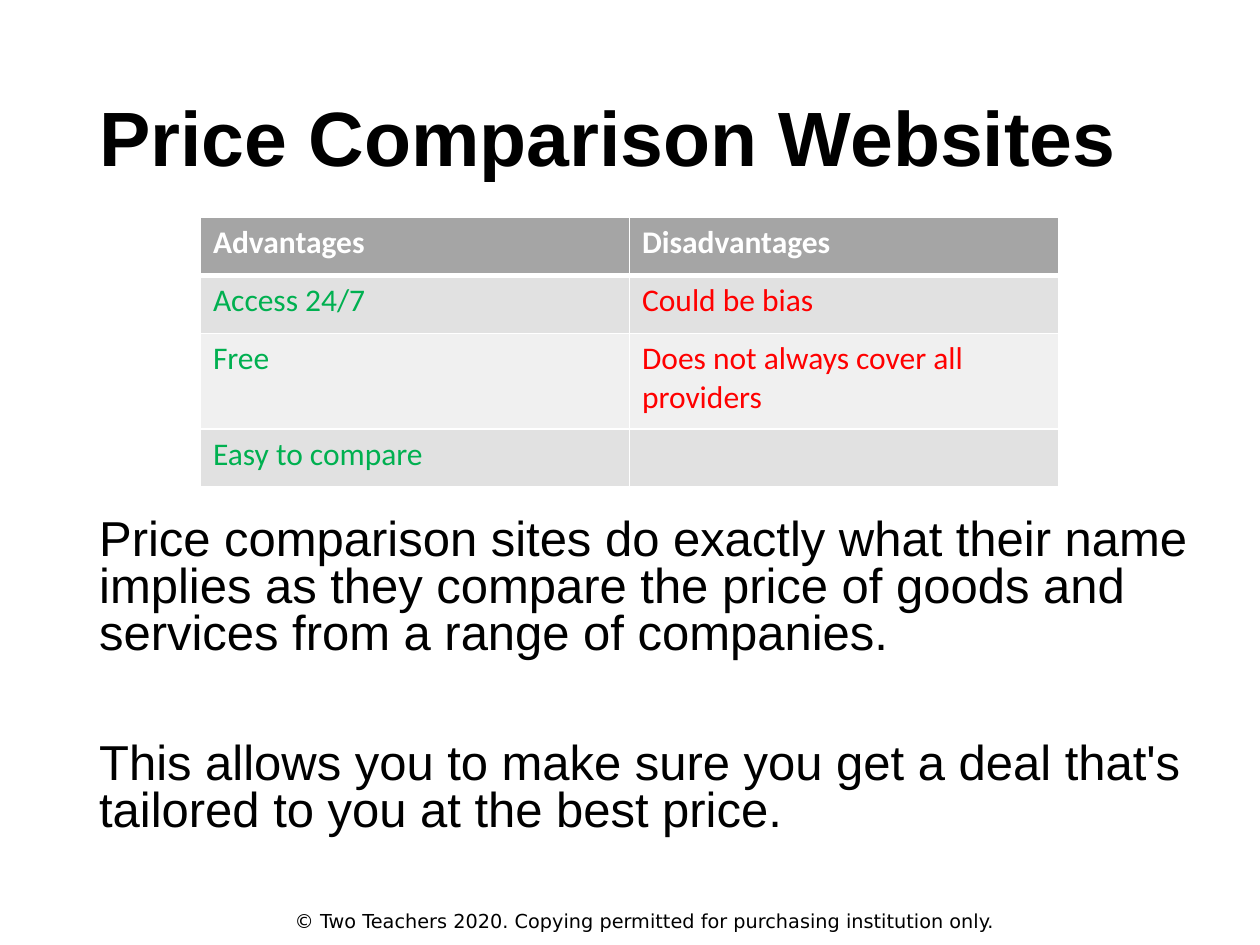
import pptx
import pptx.dml.color
import pptx.enum.text
import pptx.oxml
import pptx.oxml.ns
import pptx.util
from pptx.util import Cm

BLACK, WHITE = "000000", "FFFFFF"
GREEN, RED = "00B050", "FF0000"
HEADER_GREY, DARK_BAND, LIGHT_BAND = "A5A5A5", "E1E1E1", "F0F0F0"
MIDDLE = pptx.enum.text.MSO_ANCHOR.MIDDLE
TOP = pptx.enum.text.MSO_ANCHOR.TOP

COMPARISON = [
    ("Advantages", "Disadvantages"),
    ("Access 24/7", "Could be bias"),
    ("Free", "Does not always cover all providers"),
    ("Easy to compare", ""),
]
ROW_HEIGHTS = [1.17, 1.17, 1.93, 1.17]
EXPLANATION = [
    "Price comparison sites do exactly what their name implies as they "
    "compare the price of goods and services from a range of companies.",
    "This allows you to make sure you get a deal that's tailored to you "
    "at the best price.",
]


def colour(hex_string):
    return pptx.dml.color.RGBColor.from_string(hex_string)


def format_runs(paragraph, font_name, size, hex_string, bold=False):
    for run in paragraph.runs:
        run.font.name = font_name
        run.font.size = pptx.util.Pt(size)
        run.font.bold = bold
        run.font.color.rgb = colour(hex_string)


def place(shape, left, top, width, height):
    shape.left, shape.top = Cm(left), Cm(top)
    shape.width, shape.height = Cm(width), Cm(height)


def add_title(slide, text):
    title = slide.shapes.title
    place(title, 1.75, 1.02, 21.9, 3.68)
    title.text_frame.text = text
    title.text_frame.vertical_anchor = MIDDLE
    heading = title.text_frame.paragraphs[0]
    heading.alignment = pptx.enum.text.PP_ALIGN.LEFT
    heading.line_spacing = 0.9
    format_runs(heading, "Arial", 44, BLACK, bold=True)


def add_text(slide, box, paragraphs, font_name, size, anchor=TOP,
             line_spacing=1.0, gap=0):
    frame = slide.shapes.add_textbox(*map(Cm, box)).text_frame
    frame.word_wrap = True
    frame.vertical_anchor = anchor
    frame.text = "\n".join(paragraphs)
    for index, paragraph in enumerate(frame.paragraphs):
        paragraph.line_spacing = line_spacing
        if index:
            paragraph.space_before = pptx.util.Pt(gap)
        format_runs(paragraph, font_name, size, BLACK)


def set_borders(cell, widths):
    """Draw white borders; widths maps a side (L, R, T, B) to points."""
    properties = cell._tc.get_or_add_tcPr()
    for position, (side, width) in enumerate(widths.items()):
        border = pptx.oxml.parse_xml(
            f'<a:ln{side} {pptx.oxml.ns.nsdecls("a")} w="{pptx.util.Pt(width)}">'
            f'<a:solidFill><a:srgbClr val="{WHITE}"/></a:solidFill></a:ln{side}>'
        )
        properties.insert(position, border)


def add_comparison_table(slide):
    table = slide.shapes.add_table(
        len(COMPARISON), 2, Cm(4.04), Cm(4.38), Cm(17.3), Cm(sum(ROW_HEIGHTS))
    ).table
    for row_index, entries in enumerate(COMPARISON):
        table.rows[row_index].height = Cm(ROW_HEIGHTS[row_index])
        is_header = row_index == 0
        band = DARK_BAND if row_index % 2 else LIGHT_BAND
        for column_index, entry in enumerate(entries):
            cell = table.cell(row_index, column_index)
            cell.fill.solid()
            cell.fill.fore_color.rgb = colour(HEADER_GREY if is_header else band)
            set_borders(cell, {"L": 1, "R": 1,
                               "T": 3 if row_index == 1 else 1,
                               "B": 3 if is_header else 1})
            cell.text_frame.text = entry
            text_colour = WHITE if is_header else (GREEN, RED)[column_index]
            format_runs(cell.text_frame.paragraphs[0], "Calibri", 18,
                        text_colour, bold=is_header)


def main():
    presentation = pptx.Presentation()
    presentation.slide_width, presentation.slide_height = Cm(25.4), Cm(19.05)
    slide = presentation.slides.add_slide(presentation.slide_layouts[5])

    # Copyright line
    add_text(slide, (5.69, 18.16, 17, 0.79),
             ["© Two Teachers 2020. Copying permitted for purchasing institution only."],
             "DejaVu Sans", 11, anchor=MIDDLE)

    # Heading, explanation and table
    add_title(slide, "Price Comparison Websites")
    add_text(slide, (1.75, 10.34, 22.76, 6.68), EXPLANATION, "Arial", 28,
             line_spacing=0.8, gap=47)
    add_comparison_table(slide)

    presentation.save("out.pptx")


if __name__ == "__main__":
    main()
